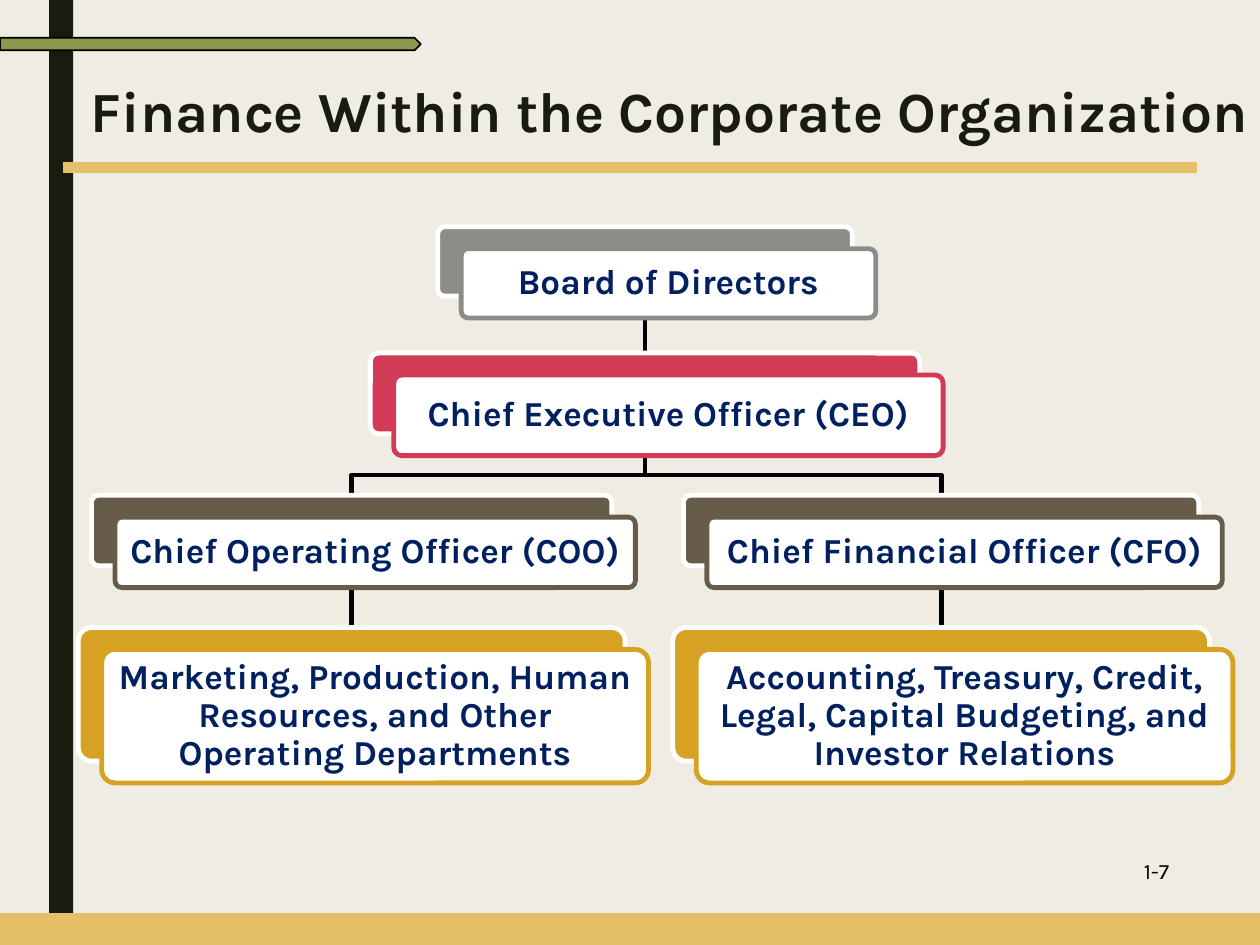
"""Build the slide that places finance within the corporate organization chart."""
from dataclasses import dataclass

from lxml import etree
from pptx import Presentation
from pptx.dml.color import RGBColor
from pptx.enum.shapes import MSO_CONNECTOR, MSO_SHAPE
from pptx.enum.text import MSO_ANCHOR, PP_ALIGN
from pptx.oxml.ns import qn
from pptx.util import Pt

RECTANGLE, ROUNDED, PENTAGON = MSO_SHAPE.RECTANGLE, MSO_SHAPE.ROUNDED_RECTANGLE, MSO_SHAPE.PENTAGON
STRAIGHT = MSO_CONNECTOR.STRAIGHT
TOP, MIDDLE = MSO_ANCHOR.TOP, MSO_ANCHOR.MIDDLE
LEFT, CENTER = PP_ALIGN.LEFT, PP_ALIGN.CENTER


@dataclass(frozen=True)
class Theme:
    font: str = "Karla"
    background: str = "EFEDE3"
    dark: str = "191B0E"
    gold: str = "E6C069"
    olive: str = "8B974E"
    black: str = "000000"
    white: str = "FFFFFF"
    navy: str = "002060"
    board: str = "8C8D86"
    ceo: str = "D13B56"
    officer: str = "675C49"
    department: str = "D7A124"
    title_size: float = 32.4
    card_size: float = 20
    number_size: float = 12.5
    chart_line: float = 2.75


@dataclass(frozen=True)
class Card:
    label: str
    axis: float
    top: float
    width: float
    height: float
    color: str

    @property
    def bottom(self):
        return self.top + self.height


class Deck:
    def __init__(self, slide, theme):
        self.slide, self.theme = slide, theme
        self.paint(slide.background.fill, theme.background)

    def paint(self, fill, color):
        fill.solid()
        fill.fore_color.rgb = RGBColor.from_string(color)

    def outline(self, line, color, width):
        self.paint(line.fill, color)
        line.width = Pt(width)

    def set_text(self, frame, text, size, color, bold=False, align=LEFT, anchor=MIDDLE, spacing=1.0):
        frame.word_wrap = True
        frame.vertical_anchor = anchor
        frame.text = text
        paragraph = frame.paragraphs[0]
        paragraph.alignment, paragraph.line_spacing = align, spacing
        font = paragraph.font
        font.name, font.size, font.bold = self.theme.font, Pt(size), bold
        font.color.rgb = RGBColor.from_string(color)

    def title(self, text, *box):
        heading = self.slide.shapes.title
        heading.left, heading.top, heading.width, heading.height = map(Pt, box)
        heading.text_frame.margin_top = Pt(5)
        self.set_text(heading.text_frame, text, self.theme.title_size, self.theme.dark,
                      bold=True, anchor=TOP, spacing=0.89)

    def label(self, text, *box):
        frame = self.slide.shapes.add_textbox(*map(Pt, box)).text_frame
        self.set_text(frame, text, self.theme.number_size, self.theme.black)

    def shape(self, kind, box, fill, line=None, width=1.0):
        shape = self.slide.shapes.add_shape(kind, *map(Pt, box))
        shape.shadow.inherit = False
        self.paint(shape.fill, fill)
        if line:
            self.outline(shape.line, line, width)
        else:
            shape.line.fill.background()
        return shape

    def line(self, start, end, color, width):
        rule = self.slide.shapes.add_connector(STRAIGHT, *map(Pt, (*start, *end)))
        self.outline(rule.line, color, width)
        etree.SubElement(rule._element.spPr, qn("a:effectLst"))

    def link(self, parent, child, rise=11.5):
        theme = self.theme
        start, end = (parent.axis, parent.bottom), (child.axis, child.top)
        if parent.axis == child.axis:
            self.line(start, end, theme.black, theme.chart_line)
            return
        turn = child.top - rise
        builder = self.slide.shapes.build_freeform(*map(Pt, start))
        corners = [(parent.axis, turn), (child.axis, turn), end]
        builder.add_line_segments([(Pt(x), Pt(y)) for x, y in corners], close=False)
        branch = builder.convert_to_shape()
        branch.shadow.inherit = False
        branch.fill.background()
        self.outline(branch.line, theme.black, theme.chart_line)

    def card(self, card, shift=(13.4, 12.5)):
        theme = self.theme
        left = card.axis - card.width / 2
        layers = [(0, 0, card.color, theme.white), (*shift, theme.white, card.color)]
        for dx, dy, fill, line in layers:
            box = (left + dx, card.top + dy, card.width, card.height)
            face = self.shape(ROUNDED, box, fill, line, theme.chart_line)
            face.adjustments[0] = 0.1
        frame = face.text_frame
        frame.margin_left = frame.margin_right = frame.margin_top = frame.margin_bottom = Pt(6)
        self.set_text(frame, card.label, theme.card_size, theme.navy,
                      bold=True, align=CENTER, spacing=0.9)


def main():
    theme = Theme()
    presentation = Presentation()
    presentation.slide_width, presentation.slide_height = Pt(720), Pt(540)
    deck = Deck(presentation.slides.add_slide(presentation.slide_layouts[5]), theme)

    deck.shape(RECTANGLE, (28.1, 0, 13.7, 540), theme.dark)
    deck.line((36, 95.8), (684, 95.8), theme.gold, 6)
    deck.shape(RECTANGLE, (0, 522, 720, 18), theme.gold, theme.gold, 0.75)
    deck.title("Finance Within the Corporate Organization", 44.6, 43.2, 693.4, 51.1)
    deck.label("1-7", 646.6, 485.3, 73.4, 24.5)

    center, operations, finance = 368.6, 201, 537.8
    board = Card("Board of Directors", center, 129.6, 236.9, 39.6, theme.board)
    ceo = Card("Chief Executive Officer (CEO)", center, 201.8, 313.9, 46.1, theme.ceo)
    coo = Card("Chief Operating Officer (COO)", operations, 283, 297.4, 40.3, theme.officer)
    cfo = Card("Chief Financial Officer (CFO)", finance, 283, 294.5, 40.3, theme.officer)
    operating_departments = Card(
        "Marketing, Production, Human Resources, and Other Operating Departments",
        operations, 358.6, 312.5, 76.3, theme.department)
    finance_departments = Card(
        "Accounting, Treasury, Credit, Legal, Capital Budgeting, and Investor Relations",
        finance, 358.6, 306.7, 76.3, theme.department)

    reports = [(cfo, finance_departments), (ceo, cfo), (coo, operating_departments),
               (ceo, coo), (board, ceo)]
    for parent, child in reports:
        deck.link(parent, child)
    for card in (board, ceo, coo, operating_departments, cfo, finance_departments):
        deck.card(card)

    deck.shape(PENTAGON, (0, 21.6, 240.5, 7.2), theme.olive, theme.black)
    presentation.save("out.pptx")


if __name__ == "__main__":
    main()
